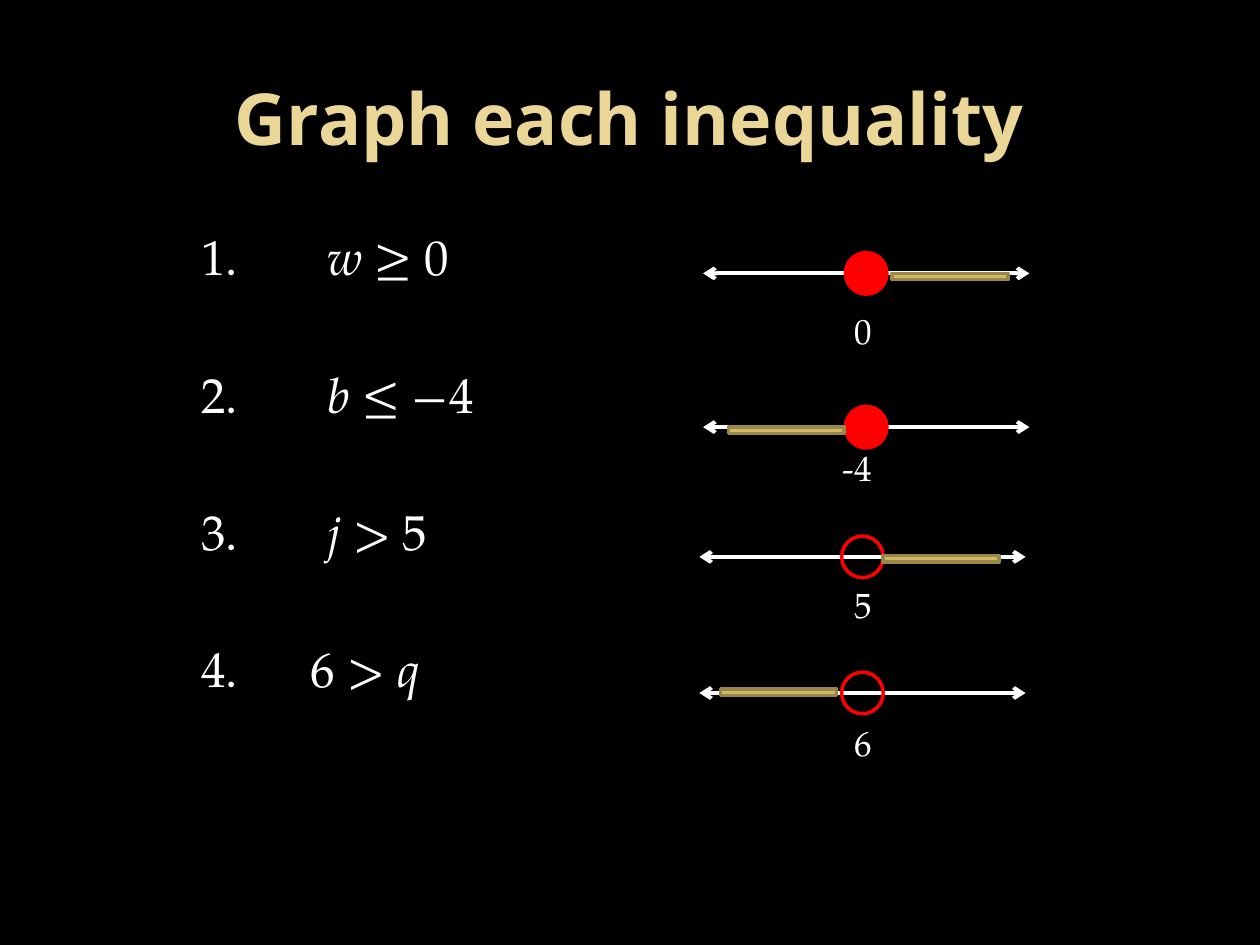
import pptx
import pptx.dml.color
import pptx.enum.shapes
import pptx.enum.text
import pptx.oxml
import pptx.oxml.ns
import pptx.util

COLORS = {"ground": "000000", "title": "EAD696", "text": "FFFFFF",
          "point": "FF0000", "ray": "CEB966", "ray_edge": "98894B"}
COLUMNS, ROWS = 10, 7.5  # square cells, one inch each
AXIS_LENGTH, POINT_SIZE = 2.59, 0.33
RAY_LENGTH, RAY_HEIGHT = 0.92, 0.05
NUMBER_TAB, LABEL_TAB = 1.0, 6.32

# number, column of the expression, its runs (text, italic), point label
INEQUALITIES = [
    ("1.", 2.0, [("w ", True), ("≥ 0", False)], "0"),
    ("2.", 2.0, [("b ", True), ("≤ −4", False)], "-4"),
    ("3.", 2.0, [("j ", True), ("> 5", False)], "5"),
    ("4.", 1.87, [("6 > ", False), ("q", True)], "6"),
]

# axis left, axis row, closed point, ray offset along and below the axis
NUMBER_LINES = [
    (5.58, 2.17, True, 1.5, 0),
    (5.58, 3.39, True, 0.2, 0),
    (5.55, 4.42, False, 1.46, -0.01),
    (5.55, 5.5, False, 0.17, -0.03),
]


def rgb(name):
    return pptx.dml.color.RGBColor.from_string(COLORS[name])


class Board:
    def __init__(self):
        self.deck = pptx.Presentation()
        self.cell = pptx.util.Inches(1)
        self.deck.slide_width = self.grid(COLUMNS)
        self.deck.slide_height = self.grid(ROWS)
        self.slide = self.deck.slides.add_slide(self.deck.slide_layouts[6])
        ground = self.slide.background.fill
        ground.solid()
        ground.fore_color.rgb = rgb("ground")

    def grid(self, cells):
        return round(cells * self.cell)

    def text_frame(self, *box):
        frame = self.slide.shapes.add_textbox(*map(self.grid, box)).text_frame
        frame.word_wrap = True
        return frame

    def run(self, paragraph, text, size, italic=False, bold=False,
            font="TeX Gyre Pagella", color="text"):
        run = paragraph.add_run()
        run.text = text
        run.font.name = font
        run.font.size = pptx.util.Pt(size)
        run.font.italic = italic
        run.font.bold = bold
        run.font.color.rgb = rgb(color)

    def title(self, text):
        frame = self.text_frame(0.5, 0.3, 9, 1.25)
        frame.vertical_anchor = pptx.enum.text.MSO_ANCHOR.MIDDLE
        heading = frame.paragraphs[0]
        heading.alignment = pptx.enum.text.PP_ALIGN.CENTER
        self.run(heading, text, 41, bold=True, font="Open Sans", color="title")

    def tab_stops(self, paragraph, *stops):
        """Set tab stops given as (column, alignment) pairs."""
        tabs = pptx.oxml.parse_xml(
            "<a:tabLst %s/>" % pptx.oxml.ns.nsdecls("a"))
        for column, alignment in stops:
            tab = tabs.makeelement(pptx.oxml.ns.qn("a:tab"))
            tab.set("pos", str(self.grid(column)))
            tab.set("algn", alignment)
            tabs.append(tab)
        paragraph._p.get_or_add_pPr().append(tabs)

    def exercises(self, inequalities):
        frame = self.text_frame(0.5, 1.75, 9, 5.15)
        for index, (number, column, expression, label) in enumerate(inequalities):
            question = frame.add_paragraph() if index else frame.paragraphs[0]
            answer = frame.add_paragraph()
            for line in (question, answer):
                line.space_before = pptx.util.Pt(5.6)
            self.tab_stops(question, (NUMBER_TAB, "l"), (column, "l"))
            self.run(question, f"\t{number}\t", 28)
            for text, italic in expression:
                self.run(question, text, 28, italic)
            self.tab_stops(answer, (LABEL_TAB, "r"))
            self.run(answer, "\t", 28)
            self.run(answer, label, 20)

    def shape(self, group, kind, box, fill, edge):
        shape = group.shapes.add_shape(kind, *map(self.grid, box))
        shape.shadow.inherit = False
        if fill:
            shape.fill.solid()
            shape.fill.fore_color.rgb = rgb(fill)
        else:
            shape.fill.background()
        shape.line.color.rgb = rgb(edge)
        shape.line.width = pptx.util.Pt(2)

    def axis(self, group, left, row):
        ends = (left, row, left + AXIS_LENGTH, row)
        axis = group.shapes.add_connector(
            pptx.enum.shapes.MSO_CONNECTOR.STRAIGHT, *map(self.grid, ends))
        axis.line.color.rgb = rgb("text")
        axis.line.width = pptx.util.Pt(2.25)
        for end in ("headEnd", "tailEnd"):
            axis.line._get_or_add_ln().append(pptx.oxml.parse_xml(
                '<a:%s %s type="arrow"/>' % (end, pptx.oxml.ns.nsdecls("a"))))
        axis._element.spPr.append(pptx.oxml.parse_xml(
            "<a:effectLst %s/>" % pptx.oxml.ns.nsdecls("a")))

    def number_line(self, left, row, closed, ray_offset, ray_drop):
        kinds = pptx.enum.shapes.MSO_SHAPE
        group = self.slide.shapes.add_group_shape()
        self.axis(group, left, row)
        point = (left + (AXIS_LENGTH - POINT_SIZE) / 2, row - POINT_SIZE / 2,
                 POINT_SIZE, POINT_SIZE)
        self.shape(group, kinds.OVAL, point, "point" if closed else None, "point")
        ray = (left + ray_offset, row + ray_drop, RAY_LENGTH, RAY_HEIGHT)
        self.shape(group, kinds.RECTANGLE, ray, "ray", "ray_edge")


def main():
    board = Board()
    board.title("Graph each inequality")
    board.exercises(INEQUALITIES)
    for number_line in NUMBER_LINES:
        board.number_line(*number_line)
    board.deck.save("out.pptx")


if __name__ == "__main__":
    main()
